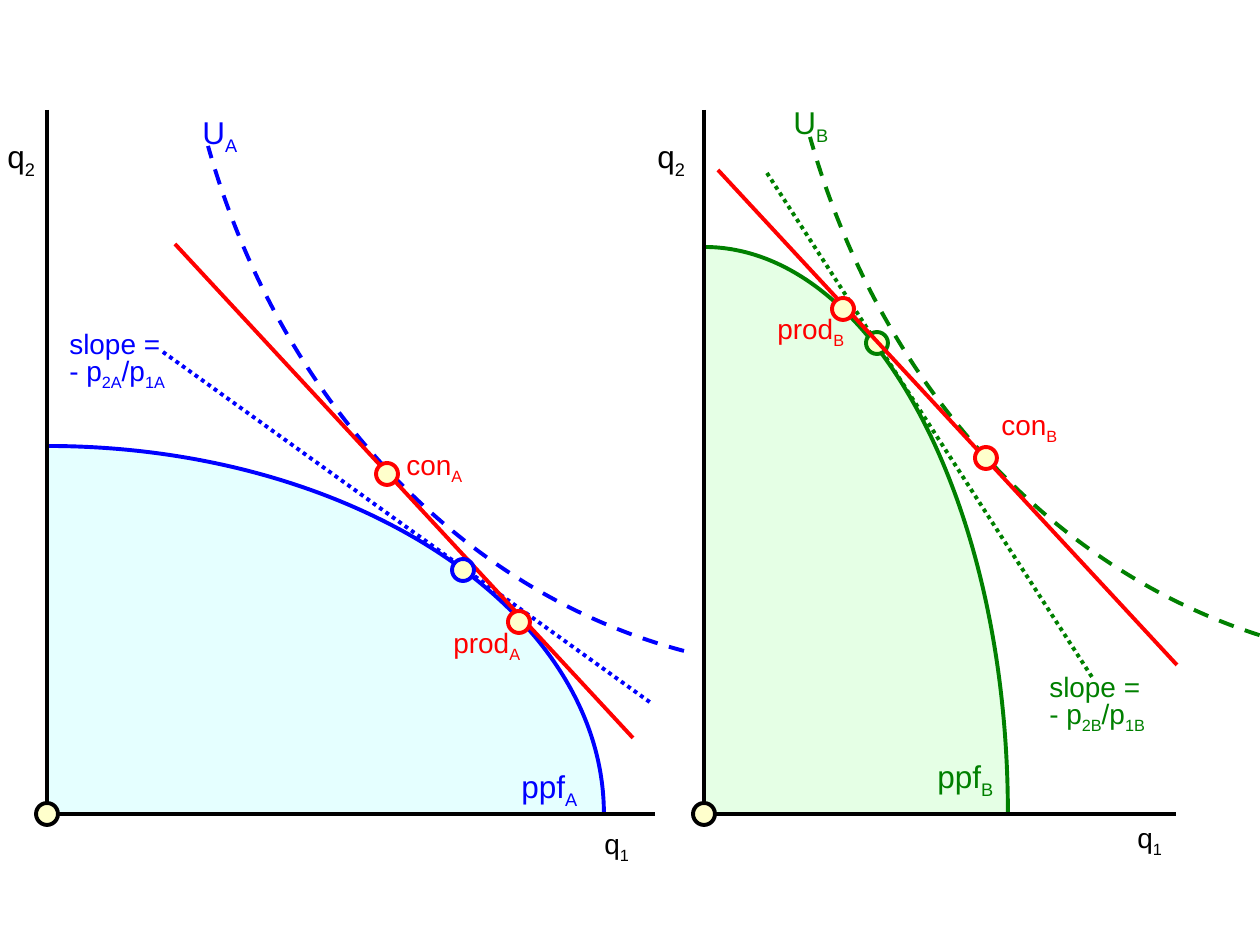
from lxml.etree import SubElement
from pptx import Presentation
from pptx.dml.color import RGBColor
from pptx.enum.dml import MSO_LINE as Dash
from pptx.enum.shapes import MSO_CONNECTOR as Link, MSO_SHAPE as Kind
from pptx.enum.text import MSO_AUTO_SIZE as Auto
from pptx.oxml.ns import qn
from pptx.util import Inches, Pt

PX = 7257  # EMU in one px, 126 px to the inch
DOT = 22
BLACK, RED, BLUE, GREEN = "000000", "FF0000", "0000FF", "008000"
CREAM, AQUA, MINT = "FFFFCC", "CCFFFF", "CCFFCC"
rgb = RGBColor.from_string

deck = Presentation()
deck.slide_width, deck.slide_height = Inches(10), Inches(7.5)
shapes = deck.slides.add_slide(deck.slide_layouts[6]).shapes


def stroke(shape, hue, dash=None):
    """Set the outline and switch off the theme shadow."""
    shape.line.color.rgb = rgb(hue)
    shape.line.width = Pt(2.25)
    if dash:
        shape.line.dash_style = dash
    SubElement(shape._element.spPr, qn("a:effectLst"))


def bend(points, corner=None):
    """Draw a cubic curve, closed through the corner if there is one."""
    pen = shapes.build_freeform(*points[0], scale=PX)
    rest = points[1:] + ([corner] if corner else [])
    pen.add_line_segments(rest, close=bool(corner))
    shape = pen.convert_to_shape()
    path = shape._element.spPr.find(".//" + qn("a:path"))
    cubic = path.makeelement(qn("a:cubicBezTo"))
    path.insert(1, cubic)
    for step in path.findall(qn("a:lnTo"))[:3]:
        cubic.append(step[0])
        path.remove(step)
    return shape


# Production frontiers: tinted area below, solid curve above
frontiers = [
    ([(47, 446), (354, 446), (604, 611), (604, 814)], BLUE, AQUA),
    ([(704, 247), (872, 247), (1008, 500), (1008, 814)], GREEN, MINT),
]
for points, hue, tint in frontiers:
    area = bend(points, corner=(points[0][0], 814))
    area.shadow.inherit = False
    area.line.fill.background()
    area.fill.solid()
    area.fill.fore_color.rgb = rgb(tint)
    color = area._element.spPr.find(".//" + qn("a:srgbClr"))
    SubElement(color, qn("a:alpha"), val="50000")
    edge = bend(points)
    edge.fill.background()
    stroke(edge, hue)

# Indifference curves
tastes = [
    ([(684, 651), (461, 592), (280, 401), (208, 146)], BLUE),
    ([(1286, 643), (1063, 583), (882, 392), (810, 137)], GREEN),
]
for points, hue in tastes:
    curve = bend(points)
    curve.fill.background()
    stroke(curve, hue, Dash.DASH)

# Lines and points, back to front; each layer draws its dots, then its lines
axes = [
    (47, 814, 655, 814, BLACK, None),
    (47, 110, 47, 814, BLACK, None),
    (704, 110, 704, 814, BLACK, None),
    (704, 814, 1176, 814, BLACK, None),
]
slopes = [
    (163, 352, 651, 703, BLUE, Dash.ROUND_DOT),
    (767, 173, 1092, 677, GREEN, Dash.ROUND_DOT),
]
trade = [
    (175, 244, 633, 738, RED, None),
    (718, 170, 1177, 665, RED, None),
]
base = [(47, 814, BLACK), (704, 814, BLACK), (877, 343, GREEN)]
top = [
    (387, 474, RED), (519, 622, RED), (463, 570, BLUE),
    (843, 309, RED), (986, 458, RED),
]
for dots, lines in [([], axes + slopes), (base, trade), (top, [])]:
    for x, y, hue in dots:
        dot = shapes.add_shape(Kind.OVAL, (x - DOT // 2) * PX, (y - DOT // 2) * PX,
                               DOT * PX, DOT * PX)
        dot.fill.solid()
        dot.fill.fore_color.rgb = rgb(CREAM)
        stroke(dot, hue)
    for *ends, hue, dash in lines:
        line = shapes.add_connector(Link.STRAIGHT, *[end * PX for end in ends])
        stroke(line, hue, dash)

# Labels: every second part between bars is a subscript
labels = [
    (509, 761, 84, 50, "ppf|A", 18, BLUE),
    (925, 751, 84, 50, "ppf|B", 18, GREEN),
    (190, 107, 63, 50, "U|A", 18, BLUE),
    (781, 97, 63, 50, "U|B", 18, GREEN),
    (-5, 131, 55, 50, "q|2", 18, BLACK),
    (645, 131, 55, 50, "q|2", 18, BLACK),
    (592, 820, 52, 47, "q|1", 16, BLACK),
    (1125, 814, 52, 47, "q|1", 16, BLACK),
    (57, 330, 139, 62, "slope =\n- p|2A|/p|1A", 16, BLUE),
    (1037, 673, 139, 62, "slope =\n- p|2B|/p|1B", 16, GREEN),
    (394, 441, 86, 47, "con|A", 16, RED),
    (989, 401, 83, 47, "con|B", 16, RED),
    (441, 619, 96, 47, "prod|A", 16, RED),
    (765, 305, 95, 47, "prod|B", 16, RED),
]
for *box, text, size, hue in labels:
    frame = shapes.add_textbox(*[side * PX for side in box]).text_frame
    rows = text.split("\n")
    frame.word_wrap = len(rows) > 1
    frame.auto_size = Auto.SHAPE_TO_FIT_TEXT
    for i, row in enumerate(rows):
        para = frame.add_paragraph() if i else frame.paragraphs[0]
        para.font.name, para.font.size = "Arial", Pt(size)
        para.font.color.rgb = rgb(hue)
        if len(rows) > 1:
            para.line_spacing = 0.7
        for j, part in enumerate(row.split("|")):
            run = para.add_run()
            run.text = part
            if j % 2:
                run._r.get_or_add_rPr().set("baseline", "-25000")

deck.save("out.pptx")
